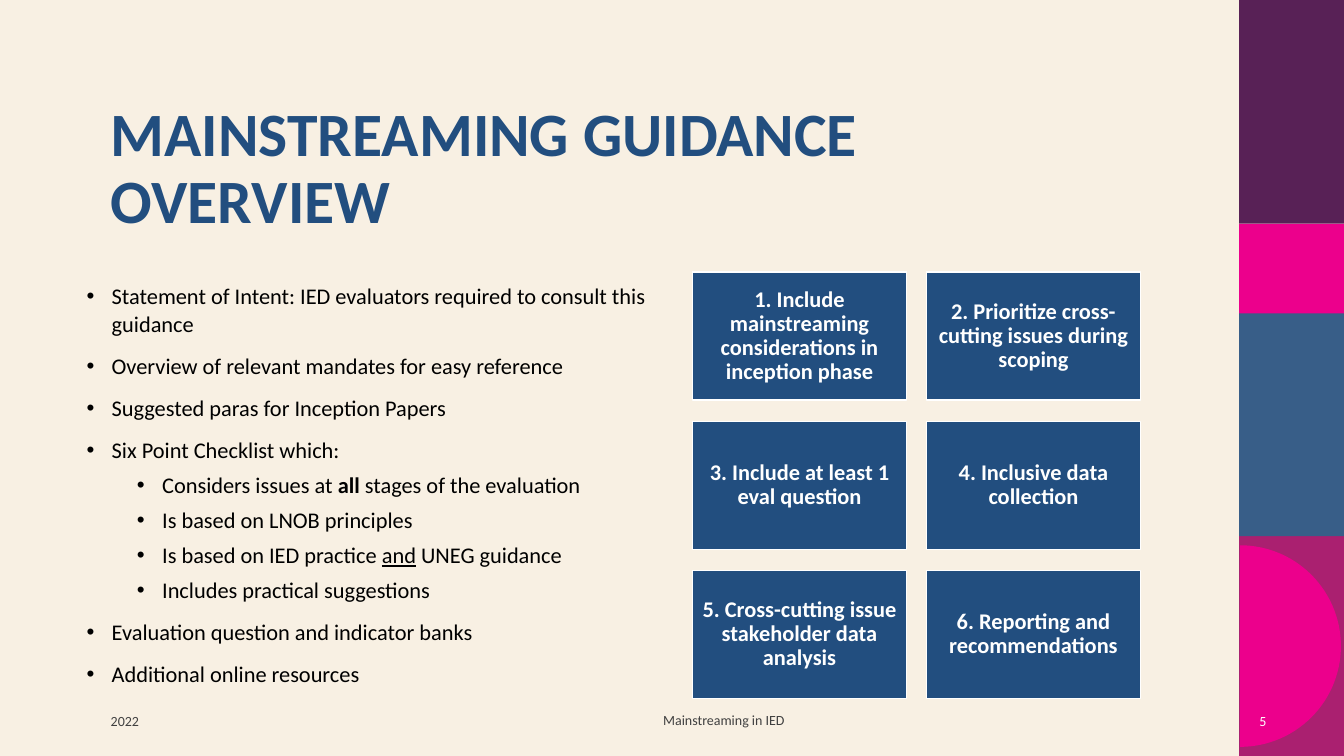
import math

from lxml import etree
from pptx import Presentation
from pptx.dml.color import RGBColor
from pptx.enum.shapes import MSO_SHAPE
from pptx.enum.text import MSO_ANCHOR, PP_ALIGN
from pptx.oxml.ns import qn
from pptx.util import Inches, Pt

RECTANGLE = MSO_SHAPE.RECTANGLE
TOP, MIDDLE = MSO_ANCHOR.TOP, MSO_ANCHOR.MIDDLE
LEFT, CENTER, RIGHT = PP_ALIGN.LEFT, PP_ALIGN.CENTER, PP_ALIGN.RIGHT

FONT = "Calibri"
CREAM, NAVY, PINK, WHITE, BLACK, GREY = (
    "F8F0E3", "224E7F", "EC008C", "FFFFFF", "000000", "404040")

TITLE = "MAINSTREAMING GUIDANCE OVERVIEW"

# (level, runs), each run being (text, style)
BULLETS = [
    (0, [("Statement of Intent: IED evaluators required to consult this guidance", "")]),
    (0, [("Overview of relevant mandates for easy reference", "")]),
    (0, [("Suggested paras for Inception Papers", "")]),
    (0, [("Six Point Checklist which:", "")]),
    (1, [("Considers issues at ", ""), ("all ", "bold"), ("stages of the evaluation", "")]),
    (1, [("Is based on LNOB principles", "")]),
    (1, [("Is based on IED practice ", ""), ("and", "underline"), (" UNEG guidance", "")]),
    (1, [("Includes practical suggestions", "")]),
    (0, [("Evaluation question and indicator banks", "")]),
    (0, [("Additional online resources", "")]),
]

CHECKLIST = [
    "1. Include mainstreaming considerations in inception phase",
    "2. Prioritize cross-cutting issues during scoping",
    "3. Include at least 1 eval question",
    "4. Inclusive data collection",
    "5. Cross-cutting issue stakeholder data analysis",
    "6. Reporting and recommendations",
]

# (top, height, colour)
SIDE_BANDS = [
    (5.28, 2.22, "AA2070"),
    (3.1, 2.22, "385E88"),
    (0, 2.22, "582156"),
    (2.22, 0.89, PINK),
]

# (text, left, top, width, alignment, colour)
FOOTERS = [
    ("2022", 1, 6.95, 1.2, LEFT, GREY),
    ("5", 12.16, 6.95, 0.5, RIGHT, WHITE),
    ("Mainstreaming in IED", 5.93, 6.94, 2.5, CENTER, GREY),
]

SLIDE_WIDTH, SLIDE_HEIGHT = 13.33, 7.5
BAND_LEFT = 12.29
CIRCLE_LEFT, CIRCLE_MIDDLE, RADIUS = 12.3, 6.41, 1
ARC_STEPS = 60
BOX_LEFT, BOX_TOP, BOX_WIDTH, BOX_HEIGHT = 6.87, 2.7, 2.12, 1.27
COLUMNS, COLUMN_STEP, ROW_STEP = 2, 2.32, 1.48


def rgb(color):
    return RGBColor.from_string(color)


def paint(shape, fill, line=None):
    shape.shadow.inherit = False
    shape.fill.solid()
    shape.fill.fore_color.rgb = rgb(fill)
    if line:
        shape.line.color.rgb = rgb(line)
        shape.line.width = Pt(1)
    else:
        shape.line.fill.background()


def add_rectangle(slide, left, top, width, height, fill, line=None):
    shape = slide.shapes.add_shape(
        RECTANGLE, Inches(left), Inches(top), Inches(width), Inches(height))
    paint(shape, fill, line)
    return shape


def add_text_box(slide, left, top, width, height):
    return slide.shapes.add_textbox(
        Inches(left), Inches(top), Inches(width), Inches(height))


def add_run(paragraph, text, size=16, color=BLACK, bold=False, underline=False):
    run = paragraph.add_run()
    run.text = text
    font = run.font
    font.name, font.size, font.bold, font.underline = FONT, Pt(size), bold, underline
    font.color.rgb = rgb(color)


def write(shape, text, anchor=MIDDLE, align=LEFT, spacing=None, inset=None, **font):
    """Fill a shape with one paragraph; font takes the options of add_run."""
    frame = shape.text_frame
    frame.word_wrap = True
    frame.vertical_anchor = anchor
    if inset is not None:
        frame.margin_left = frame.margin_right = Inches(inset)
        frame.margin_top = frame.margin_bottom = Inches(inset)
    paragraph = frame.paragraphs[0]
    paragraph.alignment = align
    paragraph.line_spacing = spacing
    add_run(paragraph, text, **font)


def add_bullet(paragraph, level):
    properties = paragraph._p.get_or_add_pPr()
    properties.set("marL", str(Inches(0.25 + 0.5 * level)))
    properties.set("indent", str(Inches(-0.25)))
    etree.SubElement(properties, qn("a:buFont")).set("typeface", "Arial")
    etree.SubElement(properties, qn("a:buChar")).set("char", "•")


def add_side_panel(slide):
    for top, height, color in SIDE_BANDS:
        add_rectangle(slide, BAND_LEFT, top, SLIDE_WIDTH - BAND_LEFT, height, color)
    angles = [math.pi * (step / ARC_STEPS - 0.5) for step in range(ARC_STEPS + 1)]
    points = [(Inches(CIRCLE_LEFT + RADIUS * math.cos(angle)),
               Inches(CIRCLE_MIDDLE + RADIUS * math.sin(angle))) for angle in angles]
    builder = slide.shapes.build_freeform(*points[0])
    builder.add_line_segments(points[1:], close=True)
    paint(builder.convert_to_shape(), PINK)


def add_overview(slide):
    frame = add_text_box(slide, 0.76, 2.74, 5.88, 4.76).text_frame
    frame.word_wrap = True
    for index, (level, runs) in enumerate(BULLETS):
        paragraph = frame.add_paragraph() if index else frame.paragraphs[0]
        paragraph.level = level
        paragraph.line_spacing = Pt(20)
        paragraph.space_before = Pt(5 if level else 10)
        add_bullet(paragraph, level)
        for text, style in runs:
            add_run(paragraph, text, bold=style == "bold", underline=style == "underline")


def add_checklist(slide):
    for index, text in enumerate(CHECKLIST):
        row, column = divmod(index, COLUMNS)
        box = add_rectangle(
            slide, BOX_LEFT + column * COLUMN_STEP, BOX_TOP + row * ROW_STEP,
            BOX_WIDTH, BOX_HEIGHT, NAVY, WHITE)
        write(box, text, align=CENTER, spacing=0.9, inset=0.07, color=WHITE, bold=True)


def main():
    presentation = Presentation()
    presentation.slide_width = Inches(SLIDE_WIDTH)
    presentation.slide_height = Inches(SLIDE_HEIGHT)
    slide = presentation.slides.add_slide(presentation.slide_layouts[6])
    slide.background.fill.solid()
    slide.background.fill.fore_color.rgb = rgb(CREAM)

    add_side_panel(slide)
    write(add_text_box(slide, 1, 0.98, 9.98, 1.45), TITLE,
          anchor=TOP, spacing=0.9, size=44, color=NAVY, bold=True)
    add_overview(slide)
    add_checklist(slide)
    for text, left, top, width, align, color in FOOTERS:
        write(add_text_box(slide, left, top, width, 0.4), text,
              align=align, size=10, color=color)

    presentation.save("out.pptx")


if __name__ == "__main__":
    main()
